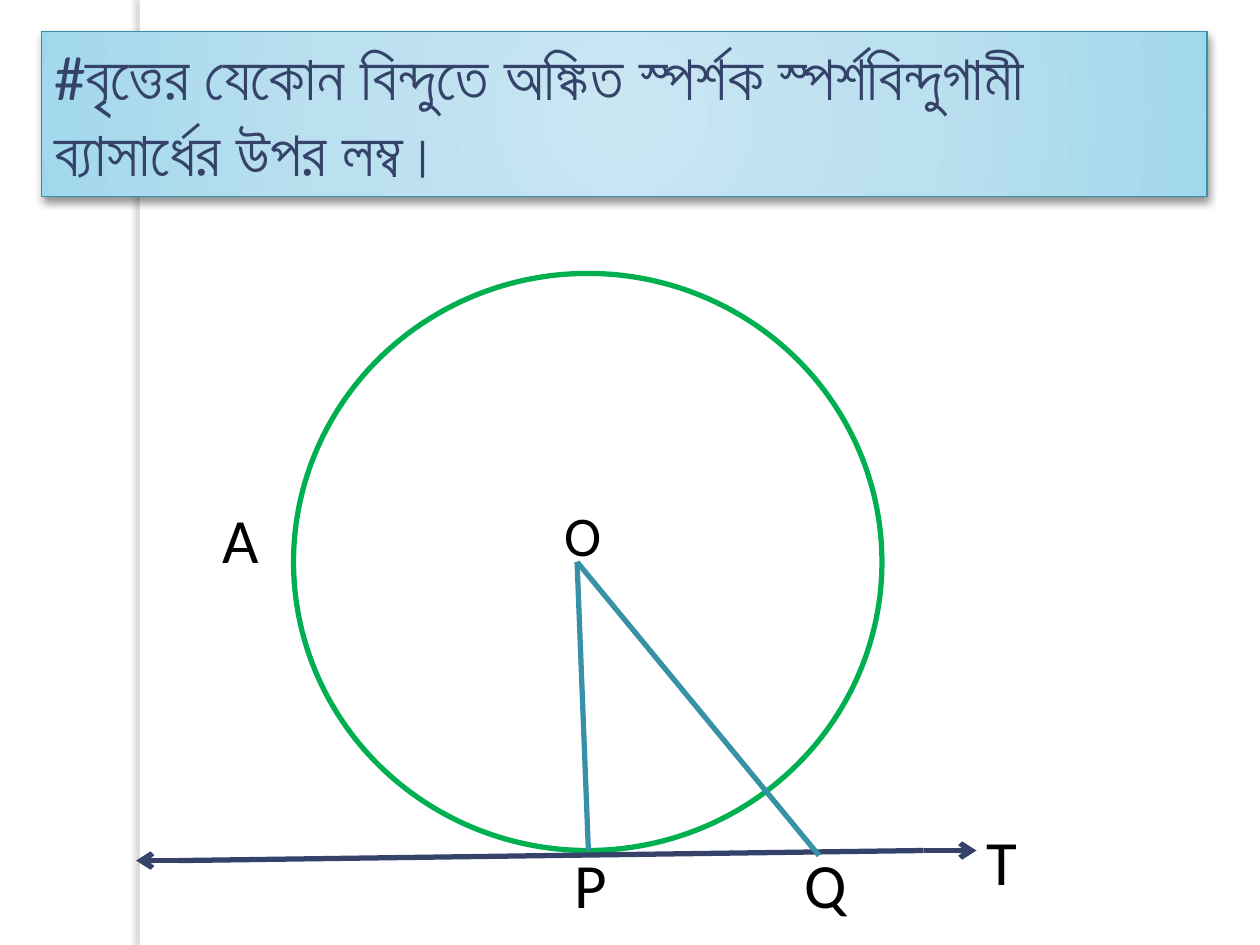
from typing import NamedTuple

from lxml.etree import SubElement
from pptx import Presentation
from pptx.dml.color import RGBColor
from pptx.enum.shapes import MSO_CONNECTOR, MSO_SHAPE
from pptx.enum.text import MSO_ANCHOR, MSO_AUTO_SIZE, PP_ALIGN
from pptx.oxml.ns import qn
from pptx.util import Emu, Pt

PX = 9144  # EMU per px, 100 px to the inch
FONT = "Calibri"
WHITE = RGBColor(0xFF, 0xFF, 0xFF)
BLACK = RGBColor(0x00, 0x00, 0x00)
NAVY = RGBColor(0x35, 0x43, 0x6A)
TEAL = RGBColor(0x38, 0x91, 0xA7)
GREEN = RGBColor(0x00, 0xB0, 0x50)
GREY = RGBColor(0x73, 0x6F, 0x63)
BANNER_STOPS = [
    (0, RGBColor(0xC9, 0xE6, 0xF2)),
    (50, RGBColor(0xBB, 0xE0, 0xEF)),
    (97, RGBColor(0xA4, 0xD8, 0xED)),
    (100, RGBColor(0x9B, 0xD7, 0xEE)),
]


class Point(NamedTuple):
    x: int
    y: int


class Segment(NamedTuple):
    start: Point
    end: Point
    color: RGBColor
    arrow: bool = False


class Label(NamedTuple):
    text: str
    x: int
    y: int
    w: int
    h: int = 71
    size: int = 36


CENTRE = Point(458, 446)
TANGENT_LEFT, TANGENT_RIGHT = Point(142, 683), Point(733, 675)

SEGMENTS = [
    Segment(TANGENT_LEFT, TANGENT_RIGHT, NAVY),
    Segment(CENTRE, Point(467, 675), TEAL),
    Segment(CENTRE, Point(650, 679), TEAL),
    Segment(TANGENT_LEFT, Point(108, 683), NAVY, arrow=True),
    Segment(TANGENT_RIGHT, Point(775, 675), NAVY, arrow=True),
]
LABELS = [
    Label("O", 438, 392, 187, h=64, size=32),
    Label("A", 167, 392, 250),
    Label("P", 446, 666, 192),
    Label("Q", 629, 666, 188),
    Label("T", 773, 648, 217),
]


def px(*values: int) -> list[Emu]:
    return [Emu(v * PX) for v in values]


def add_color(parent, color: RGBColor):
    return SubElement(parent, qn("a:srgbClr"), val=str(color))


def add_shadow(sp, color: RGBColor, alpha: int, blur: int, dist: int, angle: int) -> None:
    effects = SubElement(sp._element.spPr, qn("a:effectLst"))
    shadow = SubElement(effects, qn("a:outerShdw"), blurRad=str(Pt(blur)),
                        dist=str(Pt(dist)), dir=str(angle * 60000),
                        algn="ctr", rotWithShape="0")
    SubElement(add_color(shadow, color), qn("a:alpha"), val=str(alpha * 1000))


def add_radial_fill(sp, stops: list[tuple[int, RGBColor]]) -> None:
    grad = SubElement(sp._element.spPr, qn("a:gradFill"), rotWithShape="1")
    stop_list = SubElement(grad, qn("a:gsLst"))
    for pos, color in stops:
        add_color(SubElement(stop_list, qn("a:gs"), pos=str(pos * 1000)), color)
    radial = SubElement(grad, qn("a:path"), path="circle")
    SubElement(radial, qn("a:fillToRect"), l="50000", t="50000", r="50000", b="50000")


def format_run(p, size: int, color: RGBColor) -> None:
    font = p.runs[0].font
    font.name, font.size, font.color.rgb = FONT, Pt(size), color


def add_segment(s, seg: Segment) -> None:
    line = s.shapes.add_connector(MSO_CONNECTOR.STRAIGHT, *px(*seg.start, *seg.end))
    line.line.color.rgb = seg.color
    line.line.width = Pt(3)
    if seg.arrow:
        SubElement(line.line._get_or_add_ln(), qn("a:tailEnd"), type="arrow")
    SubElement(line._element.spPr, qn("a:effectLst"))


def add_label(s, label: Label) -> None:
    tf = s.shapes.add_textbox(*px(label.x, label.y, label.w, label.h)).text_frame
    tf.word_wrap = True
    tf.text = label.text
    format_run(tf.paragraphs[0], label.size, BLACK)


def add_side_strip(s) -> None:
    strip = s.shapes.add_shape(MSO_SHAPE.RECTANGLE, *px(111, 0, 8, 750))
    strip.fill.solid()
    strip.fill.fore_color.rgb = WHITE
    strip.line.fill.background()
    add_shadow(strip, GREY, 25, 3, 3, 180)
    s.shapes._spTree.insert(2, strip._element)  # behind the title


def format_title(s) -> None:
    title = s.shapes.title
    title.left, title.top, title.width, title.height = px(33, 25, 925, 131)
    add_radial_fill(title, BANNER_STOPS)
    title.line.color.rgb = TEAL
    title.line.width = Pt(0.75)
    add_shadow(title, BLACK, 43, 5, 2, 90)
    tf = title.text_frame
    tf.text = "#বৃত্তের যেকোন বিন্দুতে অঙ্কিত স্পর্শক স্পর্শবিন্দুগামী ব্যাসার্ধের উপর লম্ব।"
    tf.word_wrap = True
    tf.auto_size = MSO_AUTO_SIZE.NONE
    tf.vertical_anchor = MSO_ANCHOR.TOP
    tf.paragraphs[0].alignment = PP_ALIGN.LEFT
    format_run(tf.paragraphs[0], 36, NAVY)


def add_circle(s) -> None:
    circle = s.shapes.add_shape(MSO_SHAPE.OVAL, *px(233, 217, 467, 458))
    circle.fill.background()
    circle.line.color.rgb = GREEN
    circle.line.width = Pt(3)
    circle.shadow.inherit = False


def main() -> None:
    prs = Presentation()
    prs.slide_width, prs.slide_height = px(1000, 750)
    s = prs.slides.add_slide(prs.slide_layouts[5])

    # Side strip and banner
    add_side_strip(s)
    format_title(s)

    # Circle, tangent and radii
    add_circle(s)
    for seg in SEGMENTS:
        add_segment(s, seg)

    # Point names
    for label in LABELS:
        add_label(s, label)

    prs.save("out.pptx")


if __name__ == "__main__":
    main()
